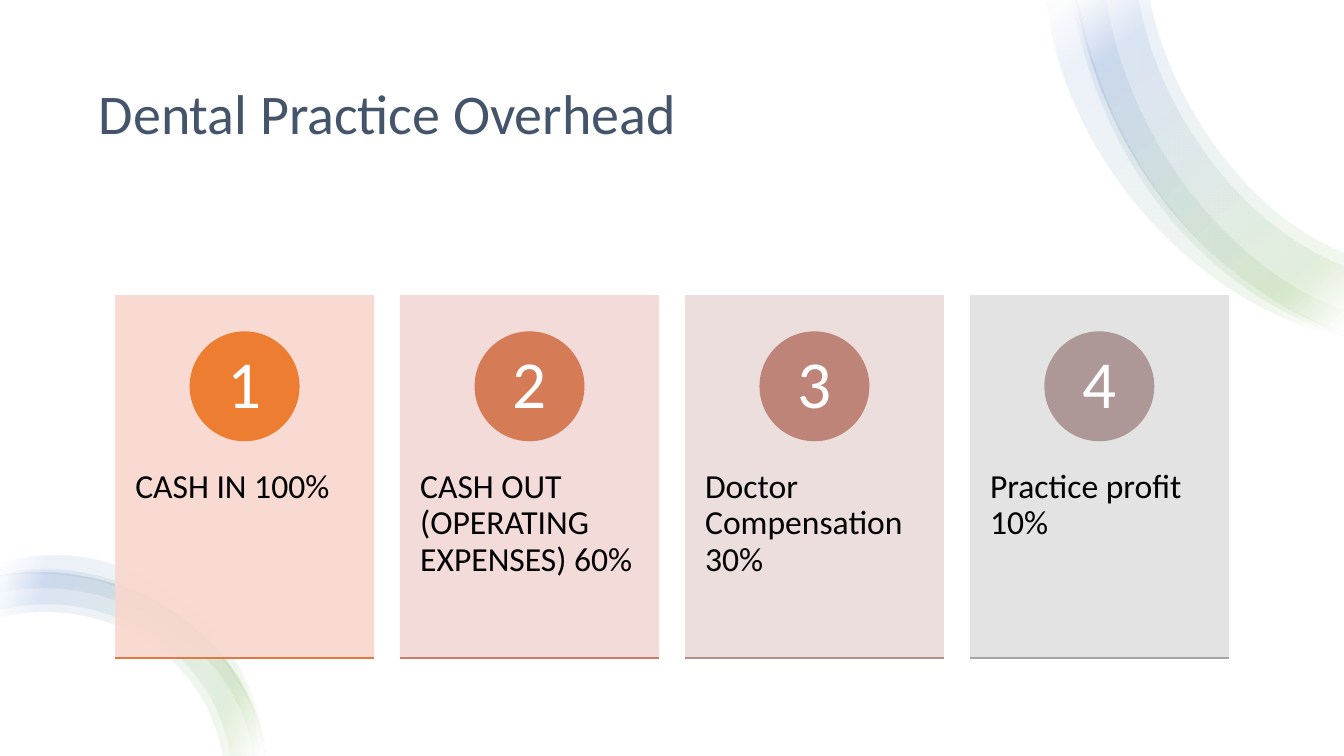
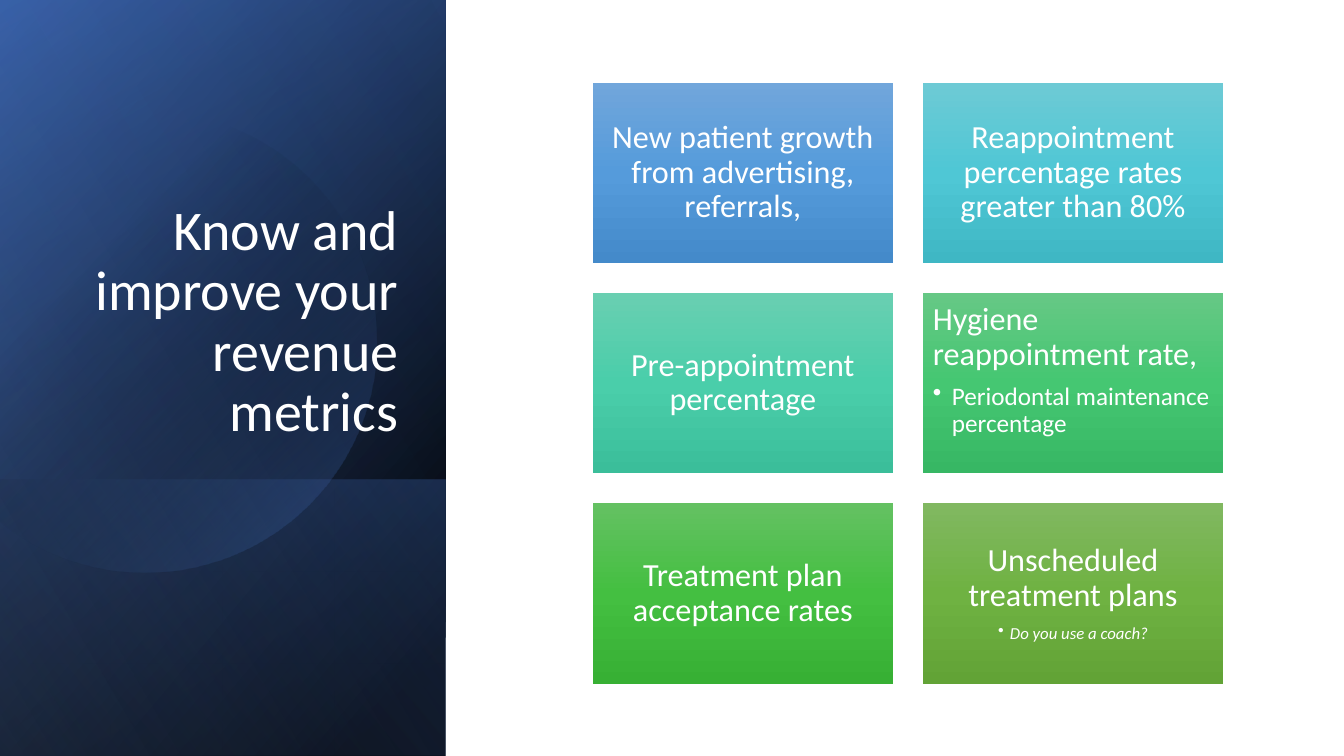
import math
from dataclasses import dataclass
from typing import NamedTuple

import pptx
import pptx.dml.color
import pptx.enum.shapes
import pptx.enum.text
import pptx.oxml.ns
import pptx.shapes.autoshape
import pptx.slide
import pptx.text.text
import pptx.util
from lxml import etree

Cm = pptx.util.Cm
Pt = pptx.util.Pt
qn = pptx.oxml.ns.qn
Align = pptx.enum.text.PP_ALIGN
Anchor = pptx.enum.text.MSO_ANCHOR
Preset = pptx.enum.shapes.MSO_SHAPE
Shape = pptx.shapes.autoshape.Shape
Slide = pptx.slide.Slide


@dataclass(frozen=True)
class Theme:
    font: str = "Calibri"
    heading: str = "44546A"
    text: str = "000000"
    white: str = "FFFFFF"
    black: str = "000000"
    blue: str = "4472C4"
    dark_blue: str = "2F5597"
    pale_blue: str = "8FAADC"
    green: str = "70AD47"
    title_size: float = 40
    number_size: float = 48
    card_size: float = 24
    tile_size: float = 23
    line_spacing: float = 0.9


THEME = Theme()
PAGE_WIDTH, PAGE_HEIGHT = 33.87, 19.05
PANEL_WIDTH = 11.23


class Box(NamedTuple):
    """Position and size in centimetres."""
    left: float
    top: float
    width: float
    height: float


class Stop(NamedTuple):
    position: int
    color: str
    opacity: int = 100


Point = tuple[float, float]


class Curve(NamedTuple):
    """Cubic curve in centimetres."""
    start: Point
    pull_start: Point
    pull_end: Point
    end: Point

    def points(self, steps: int = 32) -> list[Point]:
        def blend(axis: int, t: float) -> float:
            return sum(math.comb(3, i) * (1 - t) ** (3 - i) * t ** i * self[i][axis]
                       for i in range(4))
        return [(blend(0, i / steps), blend(1, i / steps)) for i in range(steps + 1)]


class Band(NamedTuple):
    outer: Curve
    inner: Curve
    angle: float


class Card(NamedTuple):
    text: str
    fill: str
    accent: str
    rule: str


class Tile(NamedTuple):
    text: str
    shades: tuple[str, str, str]
    bullet: str = ""
    bullet_size: float = 18
    bullet_indent: float = 0.48
    italic: bool = False
    align: Align = Align.CENTER
    anchor: Anchor = Anchor.MIDDLE
    inset: float = 0.25


CORNER_EDGE = Curve((27.13, 0), (27.76, 3.71), (30.15, 7.04), (33.87, 8.43))
FOOT_EDGE = Curve((0, 14.53), (3.05, 13.97), (6.35, 16), (6.68, 19.05))
CORNER_ANGLE, FOOT_ANGLE = 230, 200

BANDS = [
    Band(Curve((26.37, 0), (26.72, 3.68), (29.92, 7.67), (33.87, 8.5)),
         Curve((27.18, 0), (27.69, 3.3), (30.1, 7.24), (33.87, 8.33)), CORNER_ANGLE),
    Band(CORNER_EDGE,
         Curve((28.98, 0), (29.39, 2.29), (31.24, 5.33), (33.87, 6.38)), CORNER_ANGLE),
    Band(Curve((27.03, 0), (27.56, 3.43), (29.85, 7.24), (33.87, 8.46)),
         Curve((27.89, 0), (28.32, 3.05), (30.61, 6.6), (33.87, 7.82)), CORNER_ANGLE),
    Band(CORNER_EDGE,
         Curve((28.7, 0), (29.08, 2.41), (30.99, 5.59), (33.87, 6.71)), CORNER_ANGLE),
    Band(FOOT_EDGE,
         Curve((0, 15.57), (2.54, 14.94), (5.21, 16.51), (5.59, 19.05)), FOOT_ANGLE),
    Band(FOOT_EDGE,
         Curve((0, 15.39), (2.67, 14.73), (5.38, 16.38), (5.79, 19.05)), FOOT_ANGLE),
    Band(Curve((0, 14.5), (3.05, 13.77), (6.22, 16), (6.68, 19.05)),
         Curve((0, 14.94), (2.92, 14.35), (5.97, 16.26), (6.38, 19.05)), FOOT_ANGLE),
    Band(Curve((0, 14.2), (3.05, 13.26), (6.35, 15.57), (6.71, 19.05)),
         Curve((0, 14.53), (3.05, 14.02), (6.22, 16), (6.65, 19.05)), FOOT_ANGLE),
]
BAND_STOPS = [Stop(2, THEME.white, 10), Stop(16, THEME.green, 10),
              Stop(85, THEME.blue, 10), Stop(100, THEME.white, 10)]

CARDS = [
    Card("CASH IN 100%", "F8D7CE", "ED7D31", "E07A44"),
    Card("CASH OUT (OPERATING EXPENSES) 60%", "F1D8D4", "D57B56", "CA7E67"),
    Card("Doctor Compensation 30%", "E9DBDA", "BF8478", "B68D88"),
    Card("Practice profit 10%", "E1E1E1", "AD9897", "A5A5A5"),
]

TILES = [
    Tile("New patient growth from advertising, referrals,", ("71A6DB", "559BDB", "448ACA")),
    Tile("Reappointment percentage rates greater than 80%", ("6DCAD5", "4FC7D5", "3FB7C4")),
    Tile("Pre-appointment percentage", ("69CFB1", "4ACEAA", "3BBE9A")),
    Tile("Hygiene reappointment rate,", ("66C885", "45C772", "37B764"),
         bullet="Periodontal maintenance percentage", align=Align.LEFT, anchor=Anchor.TOP),
    Tile("Treatment plan acceptance rates", ("64C162", "44BF41", "37B034")),
    Tile("Unscheduled treatment plans", ("81B861", "6FB242", "62A336"),
         bullet="Do you use a coach?", bullet_size=12, bullet_indent=0.3, italic=True,
         inset=0.13),
]


def rgb(color: str) -> pptx.dml.color.RGBColor:
    return pptx.dml.color.RGBColor.from_string(color)


def set_opacity(color: etree.ElementBase, percent: int) -> None:
    if percent < 100:
        etree.SubElement(color, qn("a:alpha")).set("val", str(percent * 1000))


def fill_solid(shape: Shape, color: str, opacity: int = 100) -> None:
    shape.fill.solid()
    shape.fill.fore_color.rgb = rgb(color)
    set_opacity(shape.element.spPr.find(qn("a:solidFill")).find(qn("a:srgbClr")), opacity)


def fill_gradient(shape: Shape, stops: list[Stop], angle: float) -> None:
    """Fill along a direction given in degrees clockwise from the right."""
    shape.fill.gradient()
    gradient = shape.element.spPr.find(qn("a:gradFill"))
    stop_list = gradient.find(qn("a:gsLst"))
    for old in list(stop_list):
        stop_list.remove(old)
    for stop in stops:
        item = etree.SubElement(stop_list, qn("a:gs"))
        item.set("pos", str(stop.position * 1000))
        color = etree.SubElement(item, qn("a:srgbClr"))
        color.set("val", stop.color)
        set_opacity(color, stop.opacity)
    gradient.find(qn("a:lin")).set("ang", str(int(angle * 60000)))


def add_plain(page: Slide, preset: Preset, box: Box) -> Shape:
    """Add a preset shape without line or shadow."""
    shape = page.shapes.add_shape(preset, *map(Cm, box))
    shape.line.fill.background()
    shape.shadow.inherit = False
    return shape


def add_outline(page: Slide, points: list[Point]) -> Shape:
    """Add a closed outline without line or shadow."""
    corners = [(Cm(x), Cm(y)) for x, y in points]
    builder = page.shapes.build_freeform(*corners[0], scale=1.0)
    builder.add_line_segments(corners[1:], close=True)
    shape = builder.convert_to_shape()
    shape.line.fill.background()
    shape.shadow.inherit = False
    return shape


def set_frame(shape: Shape, anchor: Anchor, insets: Box) -> pptx.text.text.TextFrame:
    """Wrap the text; insets run left, top, right, bottom."""
    frame = shape.text_frame
    frame.word_wrap = True
    frame.auto_size = pptx.enum.text.MSO_AUTO_SIZE.NONE
    frame.vertical_anchor = anchor
    frame.margin_left, frame.margin_top, frame.margin_right, frame.margin_bottom = map(Cm, insets)
    return frame


def write(frame: pptx.text.text.TextFrame, text: str, *, size: float, color: str,
          align: Align = Align.LEFT, italic: bool = False, space_after: float = 0,
          bullet_indent: float = 0) -> None:
    """Add one paragraph; a bullet indent above zero gives it a bullet."""
    para = frame.paragraphs[0]
    if para.runs:
        para = frame.add_paragraph()
    para.alignment = align
    para.line_spacing = THEME.line_spacing
    para.space_before = Pt(0)
    para.space_after = Pt(space_after)
    if bullet_indent:
        para.level = 1
        props = para._p.get_or_add_pPr()
        props.set("marL", str(Cm(bullet_indent)))
        props.set("indent", str(-Cm(bullet_indent)))
        etree.SubElement(props, qn("a:buChar")).set("char", "•")
    span = para.add_run()
    span.text = text
    span.font.name = THEME.font
    span.font.size = Pt(size)
    span.font.italic = italic
    span.font.color.rgb = rgb(color)


def add_title(page: Slide, text: str, box: Box, color: str, align: Align, anchor: Anchor) -> None:
    """Place the title in front of what has been drawn so far."""
    title = page.shapes.title
    page.shapes.element.append(title.element)
    title.left, title.top, title.width, title.height = map(Cm, box)
    frame = set_frame(title, anchor, Box(0.25, 0.13, 0.25, 0.13))
    write(frame, text, size=THEME.title_size, color=color, align=align)


def add_card(page: Slide, number: int, card: Card, box: Box) -> None:
    panel = add_plain(page, Preset.RECTANGLE, box)
    fill_solid(panel, card.fill, 90)
    frame = set_frame(panel, Anchor.TOP, Box(0.51, 4.39, 0.51, 0.9))
    write(frame, card.text, size=THEME.card_size, color=THEME.text)

    size = 2.77
    badge = add_plain(page, Preset.OVAL,
                      Box(box.left + (box.width - size) / 2, box.top + 0.91, size, size))
    fill_solid(badge, card.accent)
    frame = set_frame(badge, Anchor.MIDDLE, Box(0, 0, 0, 0))
    write(frame, str(number), size=THEME.number_size, color=THEME.white, align=Align.CENTER)

    bottom = Cm(box.top + box.height)
    rule = page.shapes.add_connector(pptx.enum.shapes.MSO_CONNECTOR.STRAIGHT, Cm(box.left), bottom,
                                     Cm(box.left + box.width), bottom)
    rule.line.color.rgb = rgb(card.rule)
    rule.line.width = Pt(1)
    etree.SubElement(rule.element.spPr, qn("a:effectLst"))


def add_tile(page: Slide, tile: Tile, box: Box) -> None:
    shape = add_plain(page, Preset.RECTANGLE, box)
    fill_gradient(shape, [Stop(50 * i, shade) for i, shade in enumerate(tile.shades)], 90)
    frame = set_frame(shape, tile.anchor, Box(*[tile.inset] * 4))
    write(frame, tile.text, size=THEME.tile_size, color=THEME.white, align=tile.align,
          space_after=8 if tile.bullet else 0)
    if tile.bullet:
        write(frame, tile.bullet, size=tile.bullet_size, color=THEME.white, align=tile.align,
              italic=tile.italic, bullet_indent=tile.bullet_indent)


def add_side_panel(page: Slide) -> None:
    """Layer the dark gradients and the disc on the left side."""
    def layer(top: float, angle: float, *stops: Stop) -> None:
        shape = add_plain(page, Preset.RECTANGLE, Box(0, top, PANEL_WIDTH, PAGE_HEIGHT - top))
        fill_gradient(shape, list(stops), angle)

    layer(0, 220, Stop(8, THEME.black), Stop(100, THEME.dark_blue))
    layer(0, 240, Stop(0, THEME.black, 0), Stop(99, THEME.blue, 46))
    layer(12.09, 140, Stop(2, THEME.blue, 29), Stop(100, THEME.black, 30))
    center_x, center_y, radius = 3.66, 8.61, 5.82
    reach = math.acos(-center_x / radius)
    turns = [reach * (i / 40 - 1) for i in range(81)]
    disc = add_outline(page, [(center_x + radius * math.cos(turn),
                               center_y + radius * math.sin(turn)) for turn in turns])
    fill_gradient(disc, [Stop(29, THEME.black, 0), Stop(100, THEME.blue, 43)], 45)
    layer(0, 150, Stop(0, THEME.black, 0), Stop(99, THEME.pale_blue, 11))


def build_overhead(page: Slide) -> None:
    for band in BANDS:
        shape = add_outline(page, band.outer.points() + band.inner.points()[::-1])
        fill_gradient(shape, BAND_STOPS, band.angle)
    add_title(page, "Dental Practice Overhead", Box(2.24, 1.27, 29.39, 3.3),
              THEME.heading, Align.LEFT, Anchor.MIDDLE)
    for i, card in enumerate(CARDS):
        add_card(page, i + 1, card, Box(2.9 + 7.18 * i, 7.44, 6.53, 9.14))


def build_metrics(page: Slide) -> None:
    add_side_panel(page)
    add_title(page, "Know and improve your revenue metrics", Box(1.63, 4.67, 8.66, 6.65),
              THEME.white, Align.RIGHT, Anchor.BOTTOM)
    width, height, gap = 7.57, 4.55, 0.75
    for i, tile in enumerate(TILES):
        row, column = divmod(i, 2)
        add_tile(page, tile, Box(14.94 + column * (width + gap), 2.08 + row * (height + gap),
                                 width, height))


def main() -> None:
    deck = pptx.Presentation()
    deck.slide_width, deck.slide_height = Cm(PAGE_WIDTH), Cm(PAGE_HEIGHT)
    title_only = deck.slide_layouts[5]
    for build in (build_overhead, build_metrics):
        build(deck.slides.add_slide(title_only))
    deck.save("out.pptx")


if __name__ == "__main__":
    main()
